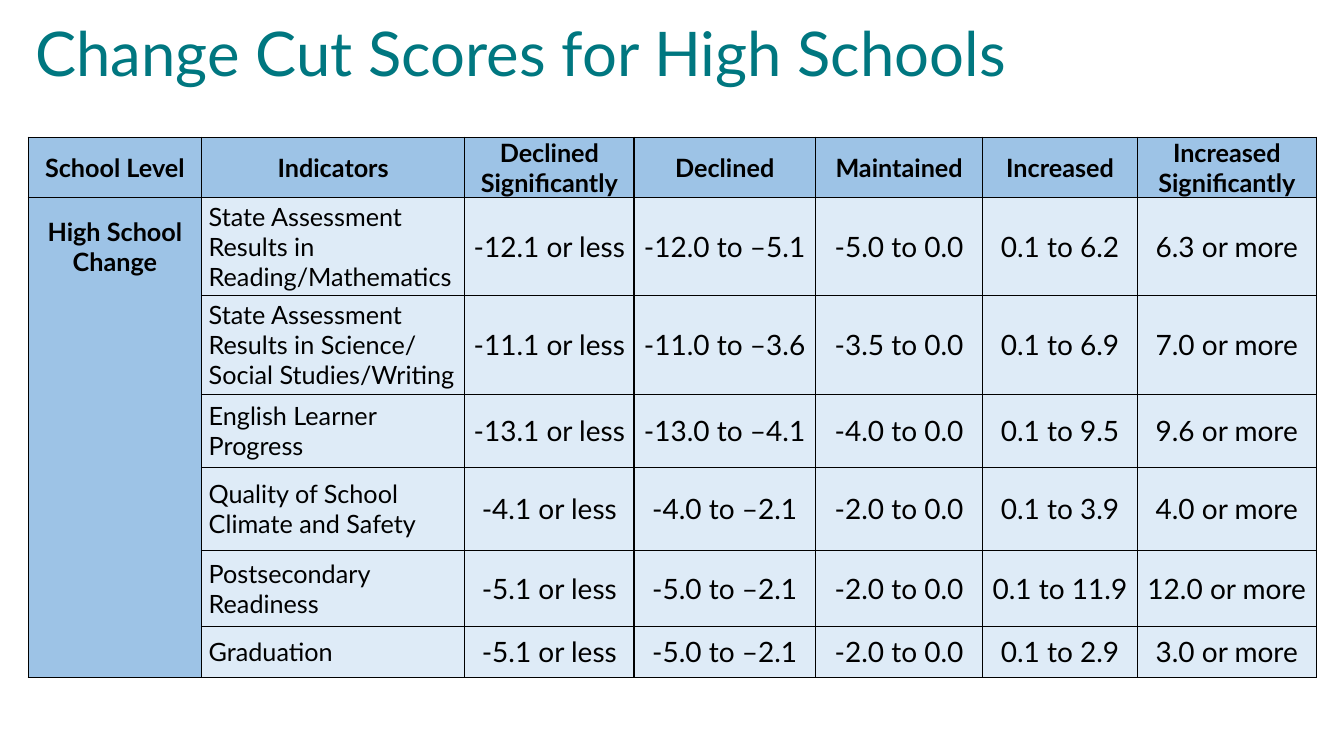
from lxml.etree import SubElement
from pptx import Presentation
from pptx.dml.color import RGBColor
from pptx.enum.text import MSO_ANCHOR as Anchor, PP_ALIGN as Align
from pptx.oxml.ns import qn
from pptx.util import Cm, Pt

TEAL = RGBColor(0x00, 0x77, 0x80)
BLACK = RGBColor(0x00, 0x00, 0x00)
HEADER_BLUE = RGBColor(0x9D, 0xC3, 0xE6)
PALE_BLUE = RGBColor(0xDE, 0xEB, 0xF7)
FONT = "Lato"

COLUMN_WIDTHS = [4.37, 6.63, 4.27, 4.57, 4.22, 3.89, 4.52]
ROW_HEIGHTS = [1.5, 2.46, 2.49, 1.85, 2.08, 1.93, 1.27]
CUT_SCORES = [
    ["School Level", "Indicators", "Declined Significantly", "Declined",
     "Maintained", "Increased", "Increased Significantly"],
    ["High School\nChange", "State Assessment Results in Reading/Mathematics",
     "-12.1 or less", "-12.0 to –5.1", "-5.0 to 0.0", "0.1 to 6.2", "6.3 or more"],
    ["", "State Assessment Results in Science/\vSocial Studies/Writing",
     "-11.1 or less", "-11.0 to –3.6", "-3.5 to 0.0", "0.1 to 6.9", "7.0 or more"],
    ["", "English Learner Progress",
     "-13.1 or less", "-13.0 to –4.1", "-4.0 to 0.0", "0.1 to 9.5", "9.6 or more"],
    ["", "Quality of School Climate and Safety",
     "-4.1 or less", "-4.0 to –2.1", "-2.0 to 0.0", "0.1 to 3.9", "4.0 or more"],
    ["", "Postsecondary Readiness",
     "-5.1 or less", "-5.0 to –2.1", "-2.0 to 0.0", "0.1 to 11.9", "12.0 or more"],
    ["", "Graduation",
     "-5.1 or less", "-5.0 to –2.1", "-2.0 to 0.0", "0.1 to 2.9", "3.0 or more"],
]


def format_text(frame, size, color, align, bold=False):
    for para in frame.paragraphs:
        para.alignment = align
        for span in para.runs:
            span.font.name = FONT
            span.font.size = Pt(size)
            span.font.bold = bold
            span.font.color.rgb = color


def set_borders(cell, visible_sides):
    """Draw the given sides (of L, R, T, B) in black and clear the others."""
    properties = cell._tc.get_or_add_tcPr()
    for position, side in enumerate("LRTB"):
        line = SubElement(properties, qn(f"a:ln{side}"), w=str(Pt(1)))
        if side in visible_sides:
            fill = SubElement(line, qn("a:solidFill"))
            SubElement(fill, qn("a:srgbClr"), val=str(BLACK))
        else:
            SubElement(line, qn("a:noFill"))
        properties.insert(position, line)


def add_title(page, text):
    title = page.shapes.title
    title.left, title.top, title.width, title.height = Cm(0), Cm(0), Cm(33.87), Cm(2.87)
    frame = title.text_frame
    frame.text = text
    frame.vertical_anchor = Anchor.MIDDLE
    para = frame.paragraphs[0]
    para.line_spacing = 0.9
    para._p.get_or_add_pPr().set("marL", str(Cm(0.64)))
    format_text(frame, 44, TEAL, Align.LEFT)


def fill_cell(cell, text, row, column):
    is_heading = row == 0 or column == 0
    is_indicator = column == 1 and not is_heading
    cell.text_frame.text = text
    cell.vertical_anchor = Anchor.MIDDLE
    cell.margin_left = cell.margin_right = Cm(0.18)
    cell.margin_top = cell.margin_bottom = Cm(0)
    format_text(cell.text_frame, 18 if is_heading or is_indicator else 20, BLACK,
                Align.LEFT if is_indicator else Align.CENTER, bold=is_heading)
    cell.fill.solid()
    cell.fill.fore_color.rgb = HEADER_BLUE if is_heading else PALE_BLUE

    # The school level runs down the first column without inner lines
    sides = "LRTB"
    if column == 0 and row > 0:
        sides = "LR"
        if row == 1:
            sides += "T"
        if row == len(CUT_SCORES) - 1:
            sides += "B"
    set_borders(cell, sides)


def add_score_table(page):
    table = page.shapes.add_table(
        len(ROW_HEIGHTS), len(COLUMN_WIDTHS), Cm(0.71), Cm(3.46),
        Cm(sum(COLUMN_WIDTHS)), Cm(sum(ROW_HEIGHTS))).table
    for column, width in zip(table.columns, COLUMN_WIDTHS):
        column.width = Cm(width)
    for row, height in zip(table.rows, ROW_HEIGHTS):
        row.height = Cm(height)
    for row, texts in enumerate(CUT_SCORES):
        for column, text in enumerate(texts):
            fill_cell(table.cell(row, column), text, row, column)


def main():
    deck = Presentation()
    deck.slide_width, deck.slide_height = Cm(33.87), Cm(19.05)
    # Title Only layout
    page = deck.slides.add_slide(deck.slide_layouts[5])
    add_title(page, "Change Cut Scores for High Schools")
    add_score_table(page)
    deck.save("out.pptx")


if __name__ == "__main__":
    main()
